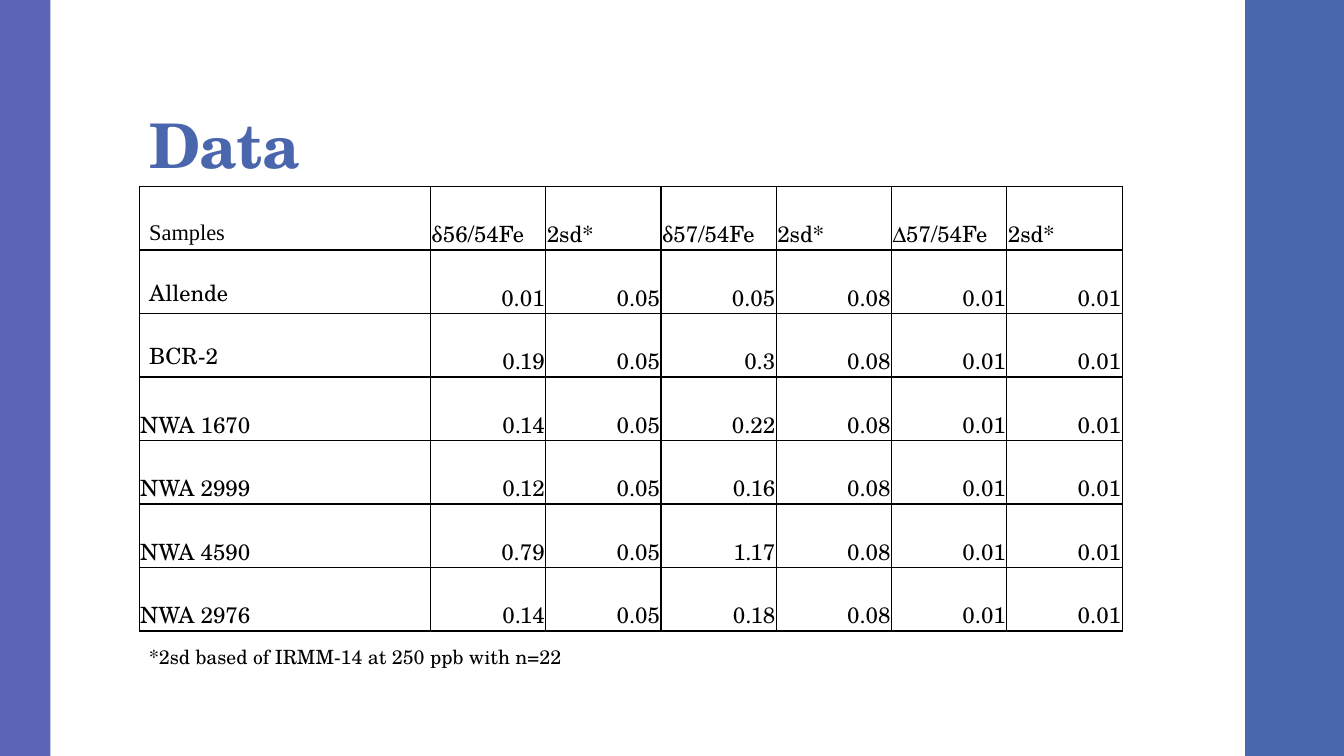
import dataclasses

import lxml.etree
import pptx
import pptx.dml.color
import pptx.enum.shapes
import pptx.enum.text
import pptx.oxml.ns
import pptx.util

Inches = pptx.util.Inches
Pt = pptx.util.Pt
RGB = pptx.dml.color.RGBColor
Anchor = pptx.enum.text.MSO_ANCHOR
Align = pptx.enum.text.PP_ALIGN

TITLE = "Data"
FOOTNOTE = "*2sd based of IRMM-14 at 250 ppb with n=22"
HEADINGS = ["Samples", "δ56/54Fe", "2sd*", "δ57/54Fe", "2sd*", "Δ57/54Fe", "2sd*"]
MEASUREMENTS = [
    ["Allende", "0.01", "0.05", "0.05", "0.08", "0.01", "0.01"],
    ["BCR-2", "0.19", "0.05", "0.3", "0.08", "0.01", "0.01"],
    ["NWA 1670", "0.14", "0.05", "0.22", "0.08", "0.01", "0.01"],
    ["NWA 2999", "0.12", "0.05", "0.16", "0.08", "0.01", "0.01"],
    ["NWA 4590", "0.79", "0.05", "1.17", "0.08", "0.01", "0.01"],
    ["NWA 2976", "0.14", "0.05", "0.18", "0.08", "0.01", "0.01"],
]
PADDED_LABELS = {"Samples", "Allende", "BCR-2"}

SLIDE_WIDTH, SLIDE_HEIGHT = 13.33, 7.5
LEFT = 1.38
TABLE_TOP, TABLE_WIDTH = 1.85, 9.75
SAMPLE_WIDTH, ROW_HEIGHT = 2.89, 0.63
PADDED_INSETS = (0.1, 0.05, 0.1, 0.05)
TIGHT_INSETS = (0.01, 0.01, 0.01, 0)


@dataclasses.dataclass(frozen=True)
class Theme:
    blue: str = "4A66AC"
    violet: str = "5C64B7"
    ink: str = "000000"
    font: str = "TeX Gyre Schola"
    samples_font: str = "Times New Roman"
    title_size: int = 44
    table_size: int = 16
    footnote_size: int = 14
    border_width: int = 1


THEME = Theme()


def style_text(paragraph, size, color=THEME.ink, font=THEME.font, bold=False):
    for run in paragraph.runs:
        run.font.size = Pt(size)
        run.font.name = font
        run.font.bold = bold
        run.font.color.rgb = RGB.from_string(color)


def set_insets(target, insets):
    """Set left, top, right and bottom margins of a cell or text frame."""
    sides = ("left", "top", "right", "bottom")
    for side, inset in zip(sides, insets):
        setattr(target, f"margin_{side}", Inches(inset))


def add_band(slide, left, width, color):
    band = slide.shapes.add_shape(
        pptx.enum.shapes.MSO_SHAPE.RECTANGLE,
        Inches(left), 0, Inches(width), Inches(SLIDE_HEIGHT))
    band.shadow.inherit = False
    band.fill.solid()
    band.fill.fore_color.rgb = RGB.from_string(color)
    band.line.fill.background()


def add_line_of_text(slide, text, top, width, height, insets, anchor):
    box = slide.shapes.add_textbox(
        Inches(LEFT), Inches(top), Inches(width), Inches(height))
    frame = box.text_frame
    frame.word_wrap = True
    frame.vertical_anchor = anchor
    set_insets(frame, insets)
    frame.text = text
    return frame


def add_borders(cell):
    qn = pptx.oxml.ns.qn
    properties = cell._tc.get_or_add_tcPr()
    for edge in ("a:lnL", "a:lnR", "a:lnT", "a:lnB"):
        line = lxml.etree.SubElement(
            properties, qn(edge), w=str(Pt(THEME.border_width)))
        fill = lxml.etree.SubElement(line, qn("a:solidFill"))
        lxml.etree.SubElement(fill, qn("a:srgbClr"), val=THEME.ink)


def fill_cell(cell, text, is_number):
    add_borders(cell)
    cell.fill.background()
    cell.vertical_anchor = Anchor.BOTTOM
    set_insets(cell, PADDED_INSETS if text in PADDED_LABELS else TIGHT_INSETS)
    cell.text_frame.text = text
    paragraph = cell.text_frame.paragraphs[0]
    paragraph.alignment = Align.RIGHT if is_number else Align.LEFT
    font = THEME.samples_font if text == "Samples" else THEME.font
    style_text(paragraph, THEME.table_size, font=font)


def add_measurement_table(slide):
    rows = [HEADINGS] + MEASUREMENTS
    table = slide.shapes.add_table(
        len(rows), len(HEADINGS), Inches(LEFT), Inches(TABLE_TOP),
        Inches(TABLE_WIDTH), Inches(ROW_HEIGHT * len(rows))).table
    table.first_row = False
    table.horz_banding = False
    value_width = (TABLE_WIDTH - SAMPLE_WIDTH) / (len(HEADINGS) - 1)
    for index, column in enumerate(table.columns):
        column.width = Inches(value_width if index else SAMPLE_WIDTH)
    for row_index, texts in enumerate(rows):
        table.rows[row_index].height = Inches(ROW_HEIGHT)
        for column_index, text in enumerate(texts):
            is_number = row_index > 0 and column_index > 0
            fill_cell(table.cell(row_index, column_index), text, is_number)


def main():
    deck = pptx.Presentation()
    deck.slide_width = Inches(SLIDE_WIDTH)
    deck.slide_height = Inches(SLIDE_HEIGHT)
    slide = deck.slides.add_slide(deck.slide_layouts[6])

    add_band(slide, 12.35, SLIDE_WIDTH - 12.35, THEME.blue)
    add_band(slide, 0, 0.5, THEME.violet)

    title = add_line_of_text(
        slide, TITLE, 0.32, 10.6, 1.53, (0.1, 0.03, 0.1, 0.05), Anchor.BOTTOM)
    heading = title.paragraphs[0]
    heading.line_spacing = 0.9
    style_text(heading, THEME.title_size, THEME.blue, bold=True)
    heading.runs[0].font._element.set("spc", "-50")

    footnote = add_line_of_text(
        slide, FOOTNOTE, 6.35, 9.07, 0.34, PADDED_INSETS, Anchor.TOP)
    footnote.auto_size = pptx.enum.text.MSO_AUTO_SIZE.SHAPE_TO_FIT_TEXT
    style_text(footnote.paragraphs[0], THEME.footnote_size)

    add_measurement_table(slide)
    deck.save("out.pptx")


if __name__ == "__main__":
    main()
